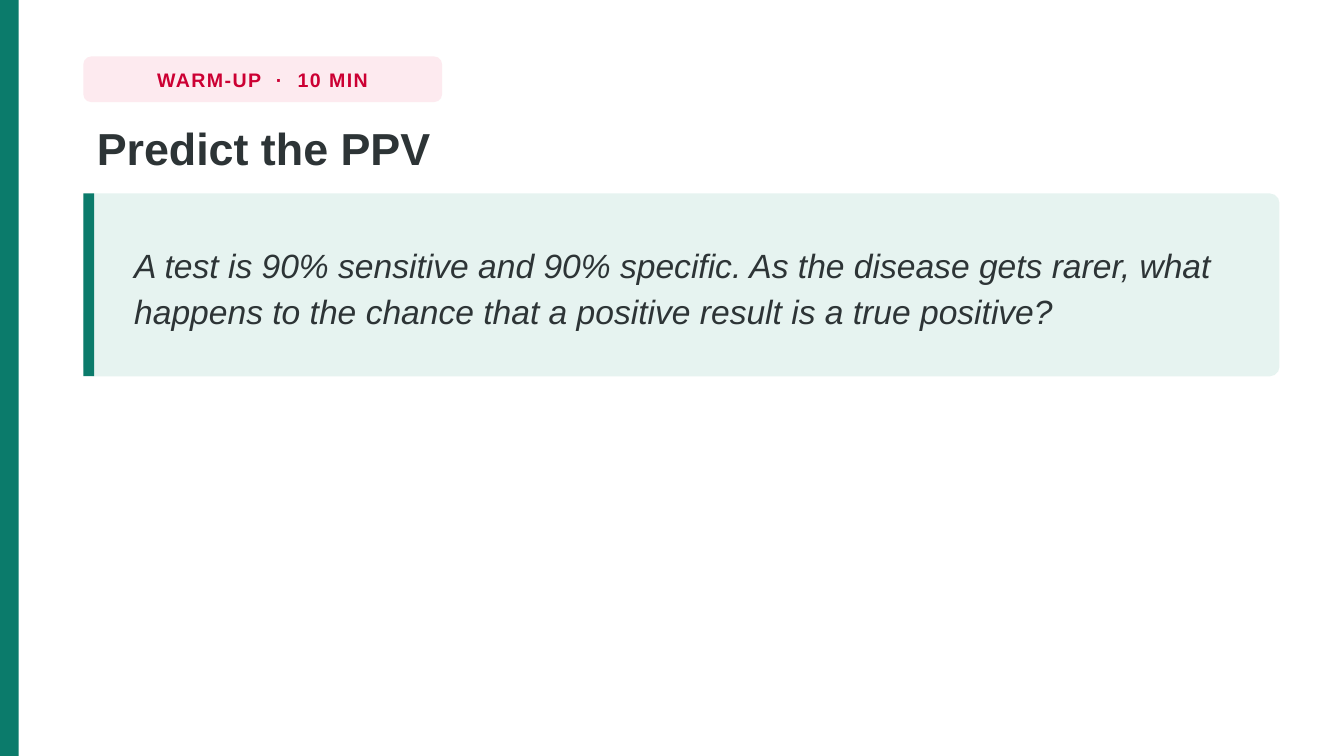
import dataclasses

import pptx
import pptx.dml.color
import pptx.enum.shapes
import pptx.enum.text
import pptx.util

PX = 4572
SHAPE = pptx.enum.shapes.MSO_SHAPE
ALIGN = pptx.enum.text.PP_ALIGN
ANCHOR = pptx.enum.text.MSO_ANCHOR


@dataclasses.dataclass(frozen=True)
class Theme:
    font: str = "Arial"
    white: str = "FFFFFF"
    green: str = "0B7B6B"
    mint: str = "E6F3F0"
    red: str = "CC0033"
    pink: str = "FDEAEF"
    ink: str = "2D3436"
    small: float = 10.5
    body: float = 18
    head: float = 24


def rgb(code):
    return pptx.dml.color.RGBColor.from_string(code)


def scale(box):
    return [pptx.util.Emu(n * PX) for n in box]


class Deck:
    def __init__(self, theme, width, height):
        self.theme = theme
        self.prs = pptx.Presentation()
        self.prs.slide_width, self.prs.slide_height = scale((width, height))
        self.slide = self.prs.slides.add_slide(self.prs.slide_layouts[5])
        fill = self.slide.background.fill
        fill.solid()
        fill.fore_color.rgb = rgb(theme.white)

    def panel(self, box, color, radius=0):
        kind = SHAPE.ROUNDED_RECTANGLE if radius else SHAPE.RECTANGLE
        shape = self.slide.shapes.add_shape(kind, *scale(box))
        if radius:
            shape.adjustments[0] = radius / min(box[2:])
        shape.shadow.inherit = False
        shape.fill.solid()
        shape.fill.fore_color.rgb = rgb(color)
        shape.line.fill.background()

    def style(self, shape, text, size, color, bold=False, italic=False,
              align=ALIGN.LEFT, anchor=ANCHOR.MIDDLE, wrap=True,
              lead=None, track=None):
        frame = shape.text_frame
        frame.text = text
        frame.word_wrap = wrap
        frame.auto_size = pptx.enum.text.MSO_AUTO_SIZE.NONE
        frame.vertical_anchor = anchor
        para = frame.paragraphs[0]
        para.alignment = align
        para.line_spacing = lead
        for run in para.runs:
            font = run.font
            font.name = self.theme.font
            font.size = pptx.util.Pt(size)
            font.bold = bold
            font.italic = italic
            font.color.rgb = rgb(color)
            if track:
                run._r.get_or_add_rPr().set("spc", str(track))

    def label(self, box, text, size, color, **look):
        self.style(self.slide.shapes.add_textbox(*scale(box)), text, size, color, **look)

    def title(self, box, text):
        shape = self.slide.shapes.title
        shape.left, shape.top, shape.width, shape.height = scale(box)
        self.style(shape, text, self.theme.head, self.theme.ink,
                   bold=True, anchor=ANCHOR.TOP, lead=1.02)


def main():
    theme = Theme()
    deck = Deck(theme, 2000, 1125)
    left, wide, radius = 124, 1780, 14
    badge = (left, 84, 534, 68)
    top, high = 288, 272

    deck.panel((0, 0, 28, 1125), theme.green)
    deck.panel(badge, theme.pink, 12)
    deck.label(badge, "WARM-UP  ·  10 MIN", theme.small, theme.red,
               bold=True, align=ALIGN.CENTER, wrap=False, track=80)
    deck.title((left, 168, wide, 112), "Predict the PPV")
    deck.panel((left, top, wide, high), theme.mint, radius)
    deck.panel((left, top, 16, high), theme.green)
    deck.label((180, top + 10, 1670, high - 20),
               "A test is 90% sensitive and 90% specific. As the disease gets rarer, "
               "what happens to the chance that a positive result is a true positive?",
               theme.body, theme.ink, italic=True, lead=1.16)
    deck.prs.save("out.pptx")


if __name__ == "__main__":
    main()
